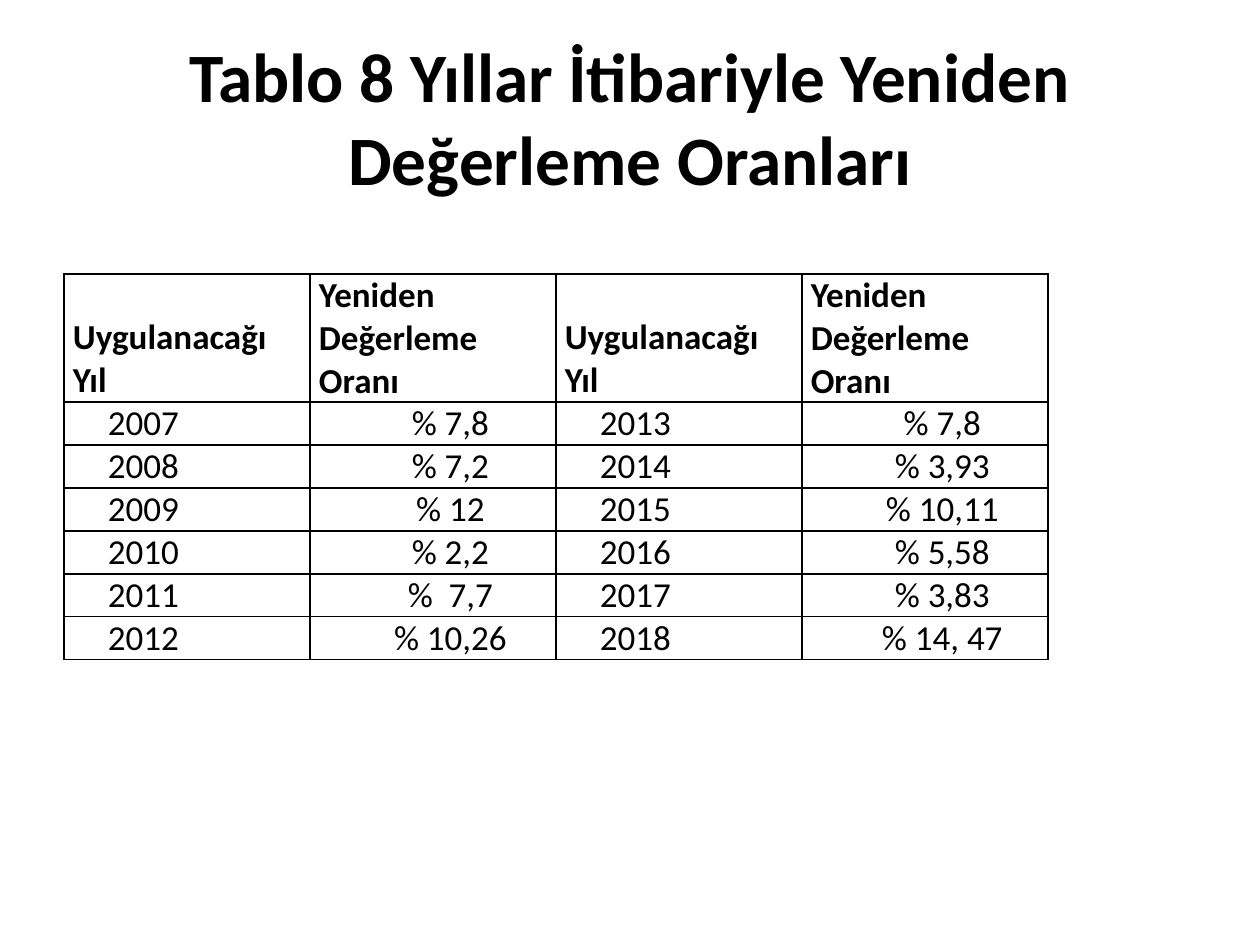
"""Build a slide with a titled table of yearly revaluation rates."""
from lxml.etree import SubElement
from pptx import Presentation
from pptx.dml.color import RGBColor
from pptx.enum.text import MSO_ANCHOR, PP_ALIGN
from pptx.oxml.ns import qn
from pptx.util import Emu, Pt

PX = 914400 // 126
FONT = "Calibri"
BLACK = "000000"
TITLE = "Tablo 8 Yıllar İtibariyle Yeniden Değerleme Oranları"
HEADERS = ["Uygulanacağı Yıl", "Yeniden Değerleme Oranı"] * 2
RATES = [
    ("2007", "% 7,8", "2013", "% 7,8"),
    ("2008", "% 7,2", "2014", "% 3,93"),
    ("2009", "% 12", "2015", "% 10,11"),
    ("2010", "% 2,2", "2016", "% 5,58"),
    ("2011", "%  7,7", "2017", "% 3,83"),
    ("2012", "% 10,26", "2018", "% 14, 47"),
]
TITLE_BOX = (63, 38, 1134, 157)
TABLE_LEFT, TABLE_TOP = 64, 274
COLUMN_WIDTH, HEADER_HEIGHT, ROW_HEIGHT = 246, 128, 43
CELL_MARGIN, INDENT = 9, 35


def px(value):
    return Emu(value * PX)


def color(value):
    return RGBColor.from_string(value)


def style(paragraph, size, bold, align):
    paragraph.alignment = align
    font = paragraph.font
    font.name, font.size, font.bold = FONT, Pt(size), bold
    font.color.rgb = color(BLACK)


def add_borders(cell):
    properties = cell._tc.get_or_add_tcPr()
    for position, side in enumerate(("lnL", "lnR", "lnT", "lnB")):
        line = properties.makeelement(qn(f"a:{side}"), {"w": str(Pt(1))})
        fill = SubElement(line, qn("a:solidFill"))
        SubElement(fill, qn("a:srgbClr"), val=BLACK)
        properties.insert(position, line)


def add_title(slide):
    frame = slide.shapes.add_textbox(*map(px, TITLE_BOX)).text_frame
    frame.word_wrap = True
    frame.vertical_anchor = MSO_ANCHOR.MIDDLE
    frame.text = TITLE
    style(frame.paragraphs[0], 39.6, True, PP_ALIGN.CENTER)


def fill_cell(cell, text, is_header, is_rate):
    cell.fill.background()
    cell.margin_left = cell.margin_right = px(CELL_MARGIN)
    cell.margin_top = cell.margin_bottom = 0
    cell.vertical_anchor = MSO_ANCHOR.BOTTOM if is_header else MSO_ANCHOR.MIDDLE
    cell.text = text
    paragraph = cell.text_frame.paragraphs[0]
    centered = is_rate and not is_header
    style(paragraph, 20, is_header, PP_ALIGN.CENTER if centered else PP_ALIGN.JUSTIFY)
    if not is_header:
        paragraph._p.get_or_add_pPr().set("indent", str(px(INDENT)))
    add_borders(cell)


def add_rates(slide):
    rows = [HEADERS, *RATES]
    heights = [HEADER_HEIGHT] + [ROW_HEIGHT] * len(RATES)
    size = (COLUMN_WIDTH * len(HEADERS), sum(heights))
    frame = slide.shapes.add_table(
        len(rows), len(HEADERS), *map(px, (TABLE_LEFT, TABLE_TOP, *size)))
    table = frame.table
    table.horz_banding = False
    for column in table.columns:
        column.width = px(COLUMN_WIDTH)
    for row_index, (values, height) in enumerate(zip(rows, heights)):
        table.rows[row_index].height = px(height)
        for column_index, text in enumerate(values):
            fill_cell(table.cell(row_index, column_index), text,
                      row_index == 0, column_index % 2 == 1)


def main():
    presentation = Presentation()
    presentation.slide_width, presentation.slide_height = px(1260), px(945)
    slide = presentation.slides.add_slide(presentation.slide_layouts[6])
    add_title(slide)
    add_rates(slide)
    presentation.save("out.pptx")


if __name__ == "__main__":
    main()
